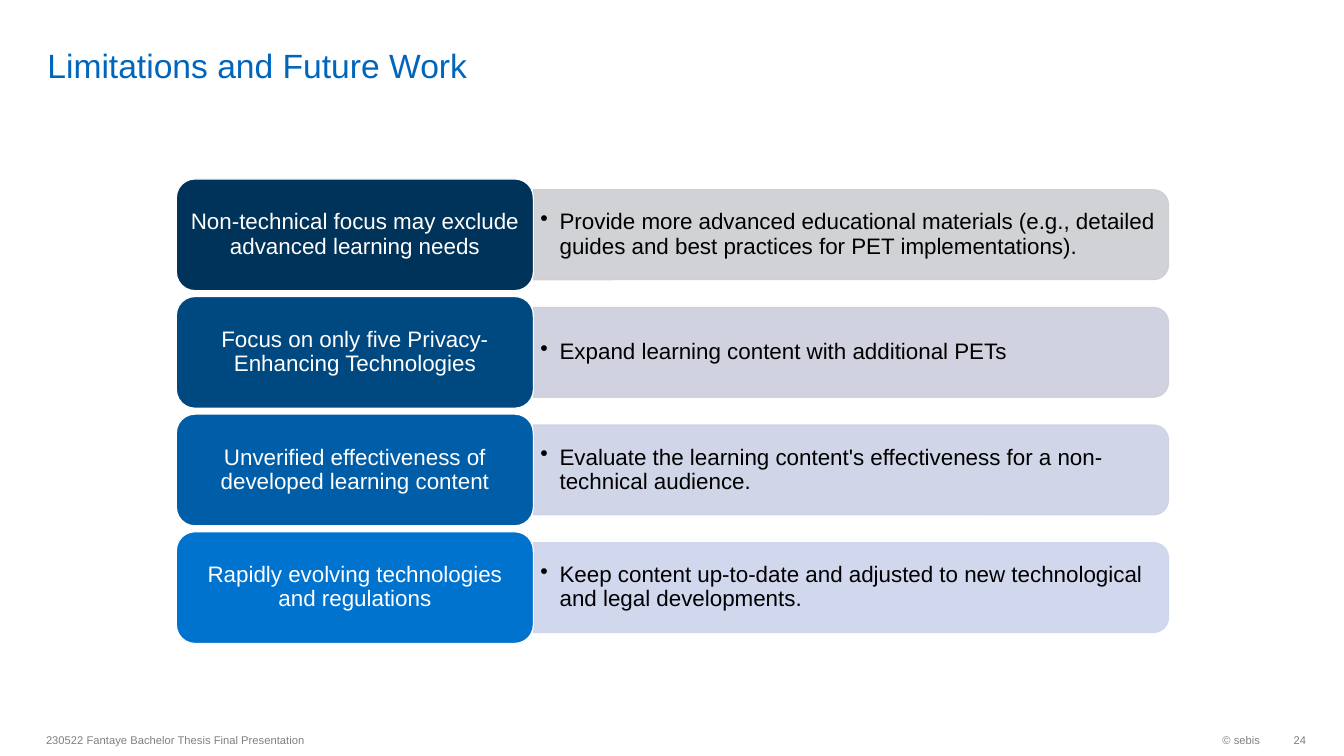
"""Build the slide on limitations and future work."""
import lxml.etree
import pptx
import pptx.dml.color
import pptx.enum.shapes
import pptx.enum.text
import pptx.oxml.ns
import pptx.util

RGB = pptx.dml.color.RGBColor.from_string
KIND = pptx.enum.shapes.MSO_SHAPE
ALIGN = pptx.enum.text.PP_ALIGN
ANCHOR = pptx.enum.text.MSO_ANCHOR
inch = pptx.util.Inches
qn = pptx.oxml.ns.qn

THEME = {
    "font": "Arial", "title": 24, "body": 16, "small": 8, "edge": 0.85,
    "blue": "0065BD", "grey": "808080", "white": "FFFFFF", "black": "000000",
}
ROWS = [
    ("Non-technical focus may exclude advanced learning needs",
     "Provide more advanced educational materials (e.g., detailed guides and best practices for PET implementations).",
     "003359", "CCCED1"),
    ("Focus on only five Privacy-Enhancing Technologies",
     "Expand learning content with additional PETs",
     "004980", "CBCFDC"),
    ("Unverified effectiveness of developed learning content",
     "Evaluate the learning content's effectiveness for a non-technical audience.",
     "005EA8", "CBD2E5"),
    ("Rapidly evolving technologies and regulations",
     "Keep content up-to-date and adjusted to new technological and legal developments.",
     "0073CF", "CCD4ED"),
]

deck = pptx.Presentation()
deck.slide_width, deck.slide_height = inch(13.33), inch(7.5)
slide = deck.slides.add_slide(deck.slide_layouts[5])
shapes = slide.shapes
CELL_W, CELL_H = deck.slide_width / 160, deck.slide_height / 90


def place(col, row, cols, rows):
    return [round(n) for n in (col * CELL_W, row * CELL_H, cols * CELL_W, rows * CELL_H)]


def write(shape, text, size, color, align=ALIGN.LEFT, anchor=ANCHOR.MIDDLE,
          pad=(0.1, 0.05, 0.1, 0.05), lead=1.0, hang=0):
    frame = shape.text_frame
    left, top, right, bottom = map(inch, pad)
    frame.text = text
    para = frame.paragraphs[0]
    if hang:
        props = para._p.get_or_add_pPr()
        props.set("marL", str(inch(hang)))
        props.set("indent", str(-inch(hang)))
        lxml.etree.SubElement(props, qn("a:buChar")).set("char", "•")
    looks = [
        (frame, {"word_wrap": True, "vertical_anchor": anchor, "margin_left": left,
                 "margin_top": top, "margin_right": right, "margin_bottom": bottom}),
        (para, {"alignment": align, "line_spacing": lead}),
        (para.runs[0].font, {"name": THEME["font"], "size": pptx.util.Pt(THEME[size])}),
        (para.runs[0].font.color, {"rgb": RGB(THEME[color])}),
    ]
    for part, values in looks:
        for name, value in values.items():
            setattr(part, name, value)


title = shapes.title
title.left, title.top, title.width, title.height = place(4.44, 0.6, 139, 9.5)
write(title, "Limitations and Future Work", "title", "blue",
      anchor=ANCHOR.BOTTOM, pad=(0.1, 0, 0.1, 0))

TOP, STEP, CARD_H = 21.3, 14, 13.3
LEFT, CARD_W = 21, 42.5
BAR_W, BAR_H, NOTE_W, NOTE_H = 75.6, 10.7, 75, 9.6
EDGE = LEFT + CARD_W
TIGHT = {"pad": (0.07, 0.03, 0.07, 0.03), "lead": 0.9}

for step, (limit, plan, dark, pale) in enumerate(ROWS):
    top = TOP + step * STEP
    mid = top + CARD_H / 2
    bar = shapes.add_shape(KIND.ROUND_2_SAME_RECTANGLE, *place(
        EDGE + (BAR_W - BAR_H) / 2, mid - BAR_W / 2, BAR_H, BAR_W))
    bar.rotation = 90
    note = shapes.add_textbox(*place(EDGE, mid - NOTE_H / 2, NOTE_W, NOTE_H))
    card = shapes.add_shape(KIND.ROUNDED_RECTANGLE, *place(LEFT, top, CARD_W, CARD_H))
    for shape, fill, line in ((bar, pale, pale), (card, dark, THEME["white"])):
        shape.shadow.inherit = False
        shape.fill.solid()
        shape.fill.fore_color.rgb = RGB(fill)
        shape.line.color.rgb = RGB(line)
        shape.line.width = pptx.util.Pt(THEME["edge"])
    for color in bar.element.spPr.iter(qn("a:srgbClr")):
        lxml.etree.SubElement(color, qn("a:alpha")).set("val", "90000")
    write(note, plan, "body", "black", hang=0.19, **TIGHT)
    write(card, limit, "body", "white", align=ALIGN.CENTER, **TIGHT)

FOOT = [
    ("230522 Fantaye Bachelor Thesis Final Presentation", 4.3, 75.6, ALIGN.LEFT, 0.1),
    ("© sebis", 123.1, 28.1, ALIGN.RIGHT, 0.1),
    ("24", 151.2, 4.3, ALIGN.RIGHT, 0),
]
for text, col, cols, align, right in FOOT:
    box = shapes.add_textbox(*place(col, 86.2, cols, 3.8))
    write(box, text, "small", "grey", align=align, pad=(0.1, 0.05, right, 0.05))

deck.save("out.pptx")
